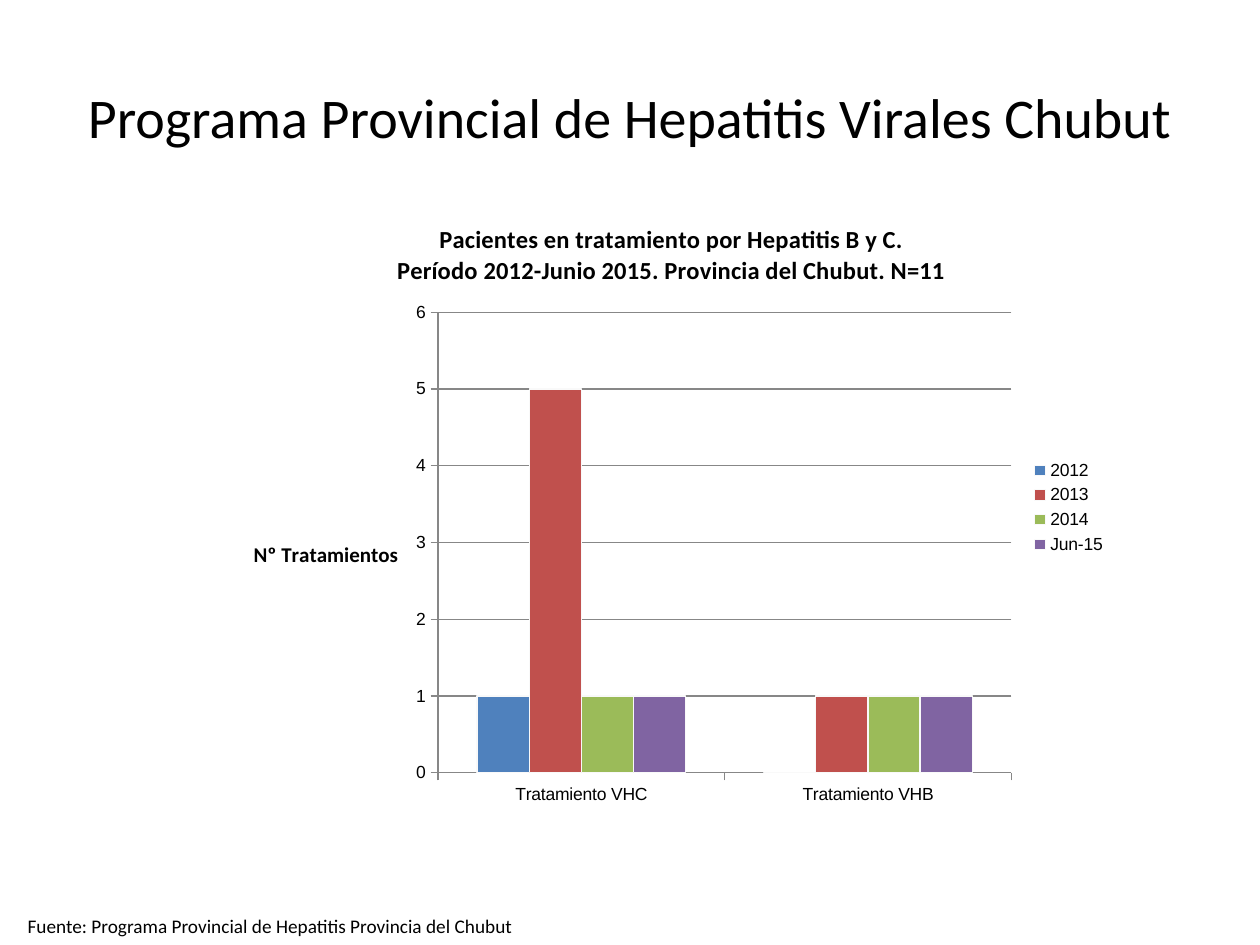
import lxml.etree
import pptx
import pptx.chart.data
import pptx.dml.color
import pptx.enum.chart
import pptx.enum.text
import pptx.oxml
import pptx.oxml.ns
import pptx.util
from pptx.util import Inches

COLORS = {
    "text": "000000",
    "background": "FFFFFF",
    "axis": "878787",
    "bar_border": "F9F9F9",
    "2012": "4F81BD",
    "2013": "C0504D",
    "2014": "9BBB59",
    "Jun-15": "8064A2",
}
CATEGORIES = ["Tratamiento VHC", "Tratamiento VHB"]
TREATMENTS = {"2012": (1, 0), "2013": (5, 1), "2014": (1, 1), "Jun-15": (1, 1)}
qn = pptx.oxml.ns.qn


def color(name):
    return pptx.dml.color.RGBColor.from_string(COLORS[name])


class SlideBuilder:
    heading_font = "Calibri"
    chart_font = "Arial"

    def __init__(self, slide):
        self.slide = slide

    def style_font(self, font, size, name=heading_font, bold=False):
        font.name = name
        font.size = pptx.util.Pt(size)
        font.bold = bold
        font.color.rgb = color("text")

    def style_line(self, line, name):
        line.color.rgb = color(name)
        line.width = pptx.util.Pt(0.75)

    def place(self, element, predecessor, **fractions):
        for old_layout in element.findall(qn("c:layout")):
            element.remove(old_layout)
        layout = pptx.oxml.parse_xml(
            f"<c:layout {pptx.oxml.ns.nsdecls('c')}><c:manualLayout/></c:layout>"
        )
        settings = {"xMode": "edge", "yMode": "edge", **fractions}
        if "w" in fractions:
            settings = {"layoutTarget": "inner", **settings}
        for tag, value in settings.items():
            child = lxml.etree.SubElement(layout[0], qn(f"c:{tag}"))
            child.set("val", str(value))
        if predecessor:
            element.find(qn(predecessor)).addnext(layout)
        else:
            element.insert(0, layout)

    def add_title(self, text):
        title = self.slide.shapes.title
        title.left, title.top = Inches(0.5), Inches(0.3)
        title.width, title.height = Inches(9), Inches(1.25)
        title.text_frame.text = text
        title.text_frame.vertical_anchor = pptx.enum.text.MSO_ANCHOR.MIDDLE
        paragraph = title.text_frame.paragraphs[0]
        paragraph.alignment = pptx.enum.text.PP_ALIGN.CENTER
        self.style_font(paragraph.font, 32)

    def add_text(self, text, left, top, width, height, size):
        box = self.slide.shapes.add_textbox(left, top, width, height)
        box.text_frame.word_wrap = True
        box.text_frame.text = text
        self.style_font(box.text_frame.paragraphs[0].font, size)

    def write_chart_title(self, title, text, size, x, y):
        title.text_frame.text = text
        for paragraph in title.text_frame.paragraphs:
            self.style_font(paragraph.font, size, bold=True)
        self.place(title.element, "c:tx", x=x, y=y)

    def add_column_chart(self, title, axis_title, left, top, width, height):
        data = pptx.chart.data.CategoryChartData()
        data.categories = CATEGORIES
        for name, values in TREATMENTS.items():
            data.add_series(name, values)
        chart = self.slide.shapes.add_chart(
            pptx.enum.chart.XL_CHART_TYPE.COLUMN_CLUSTERED, left, top, width, height, data
        ).chart
        self.style_font(chart.font, 10, self.chart_font)
        self.write_chart_title(chart.chart_title, title, 14, 0.19, 0.04)
        chart.chart_title.include_in_layout = True
        self.style_axes(chart, axis_title)
        self.style_columns(chart.plots[0])
        self.style_legend(chart)
        plot_area = chart.element.find(f".//{qn('c:plotArea')}")
        self.place(plot_area, None, x=0.24, y=0.19, w=0.64, h=0.74)
        plot_area.append(pptx.oxml.parse_xml(
            f"<c:spPr {pptx.oxml.ns.nsdecls('c', 'a')}><a:solidFill>"
            f"<a:srgbClr val='{COLORS['background']}'/></a:solidFill></c:spPr>"
        ))

    def style_axes(self, chart, axis_title):
        for axis in (chart.category_axis, chart.value_axis):
            axis.major_tick_mark = pptx.enum.chart.XL_TICK_MARK.OUTSIDE
            self.style_line(axis.format.line, "axis")
        axis = chart.value_axis
        axis.minimum_scale, axis.maximum_scale, axis.major_unit = 0, 6, 1
        self.style_line(axis.major_gridlines.format.line, "axis")
        self.write_chart_title(axis.axis_title, axis_title, 12, 0.03, 0.55)
        body = axis.axis_title.element.find(f".//{qn('a:bodyPr')}")
        body.set("rot", "0")
        body.set("vert", "horz")

    def style_columns(self, plot):
        plot.gap_width = 150
        plot.overlap = 0
        plot.vary_by_categories = False
        for series in plot.series:
            series.format.fill.solid()
            series.format.fill.fore_color.rgb = color(series.name)
            self.style_line(series.format.line, "bar_border")

    def style_legend(self, chart):
        chart.has_legend = True
        chart.legend.position = pptx.enum.chart.XL_LEGEND_POSITION.RIGHT
        chart.legend.include_in_layout = True
        legend = chart.element.find(f".//{qn('c:legend')}")
        self.place(legend, "c:legendPos", x=0.9, y=0.42)


def main():
    presentation = pptx.Presentation()
    presentation.slide_width = Inches(10)
    presentation.slide_height = Inches(7.5)
    builder = SlideBuilder(presentation.slides.add_slide(presentation.slide_layouts[5]))
    builder.add_column_chart(
        "Pacientes en tratamiento por Hepatitis B y C.\n"
        "Período 2012-Junio 2015. Provincia del Chubut. N=11",
        "Nº Tratamientos",
        Inches(1.77), Inches(1.54), Inches(7.11), Inches(4.94),
    )
    builder.add_text(
        "Fuente: Programa Provincial de Hepatitis Provincia del Chubut",
        Inches(0.12), Inches(7.21), Inches(4.09), Inches(0.28), 11,
    )
    builder.add_title("Programa Provincial de Hepatitis Virales Chubut")
    presentation.save("out.pptx")


if __name__ == "__main__":
    main()
